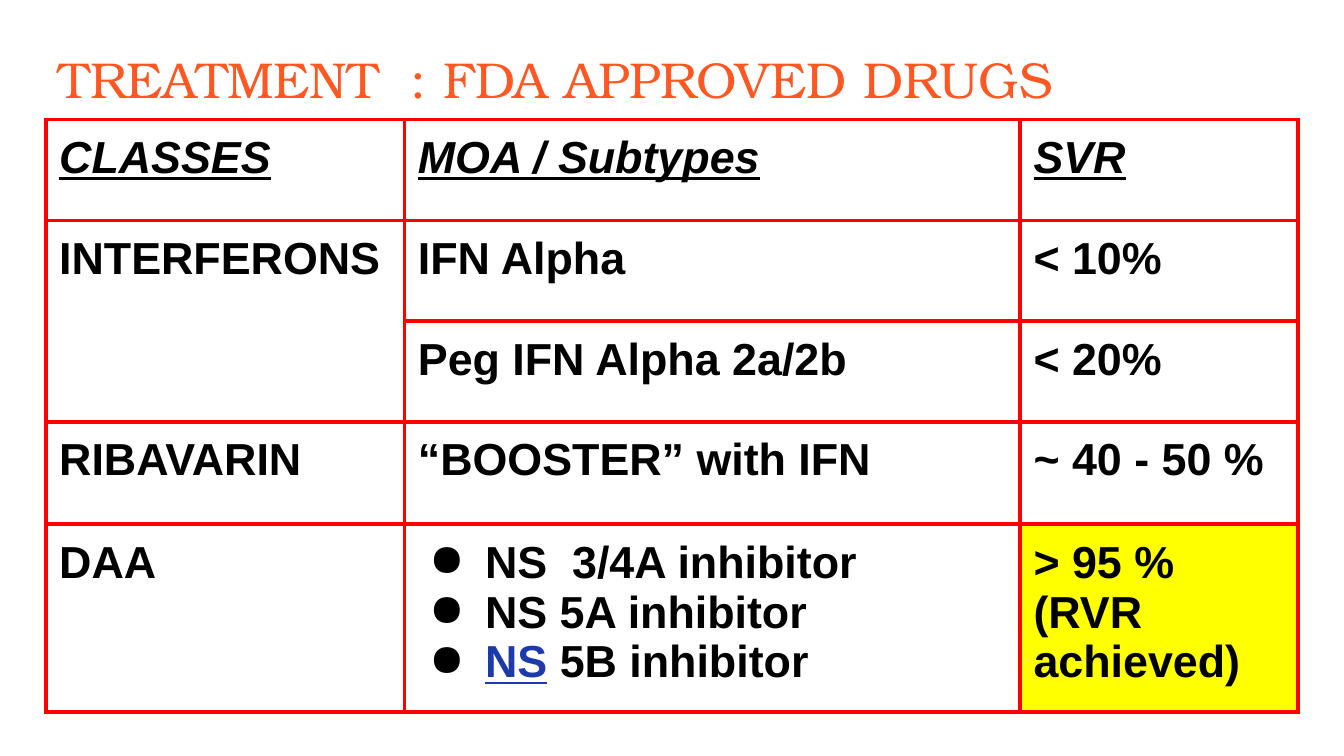
from lxml.etree import SubElement
from pptx import Presentation
from pptx.dml.color import RGBColor
from pptx.enum.text import MSO_ANCHOR
from pptx.oxml.ns import qn
from pptx.util import Pt

BLACK = RGBColor(0x00, 0x00, 0x00)
ORANGE = RGBColor(0xFF, 0x57, 0x22)
RED = RGBColor(0xFF, 0x00, 0x00)
BLUE = RGBColor(0x1C, 0x3A, 0xA9)
YELLOW = RGBColor(0xFF, 0xFF, 0x00)

TITLE = "TREATMENT  : FDA APPROVED DRUGS"
ROWS = [
    ("CLASSES", "MOA / Subtypes", "SVR"),
    ("INTERFERONS", "IFN Alpha", "< 10%"),
    ("", "Peg IFN Alpha 2a/2b", "< 20%"),
    ("RIBAVARIN", "“BOOSTER” with IFN", "~ 40 - 50 %"),
    ("DAA", "NS  3/4A inhibitor\nNS 5A inhibitor\nNS 5B inhibitor", "> 95 %\n(RVR achieved)"),
]
LINKED_LINE, LINKED_WORD = "NS 5B inhibitor", "NS"
BULLETED, HIGHLIGHTED = (4, 1), (4, 2)
MERGED = (1, 0), (2, 0)

LEFT, TABLE_TOP = 24.5, 64.1
COLUMN_WIDTHS = [192.2, 329.8, 149]
ROW_HEIGHTS = [54, 54, 54, 54.7, 94.5]
INSET = 7.2
BORDER = 2.25

TITLE_FONT = {"name": "TeX Gyre Bonum", "size": Pt(27)}
BODY_FONT = {"name": "Arial", "size": Pt(24), "bold": True}
HEADER_FONT = {**BODY_FONT, "italic": True, "underline": True}
LINK_FONT = {**BODY_FONT, "underline": True}
MARGINS = {f"margin_{side}": Pt(INSET) for side in ("left", "top", "right", "bottom")}


def set_all(target, values):
    for name, value in values.items():
        setattr(target, name, value)


def add_span(para, text, font, color):
    span = para.add_run()
    span.text = text
    set_all(span.font, font)
    span.font.color.rgb = color


def add_bullet(para):
    props = para._p.get_or_add_pPr()
    props.set("marL", str(Pt(36)))
    props.set("indent", str(Pt(-30)))
    color = SubElement(props, qn("a:buClr"))
    SubElement(color, qn("a:srgbClr"), val=str(BLACK))
    SubElement(props, qn("a:buChar"), char="●")


def add_borders(cell):
    props = cell._tc.get_or_add_tcPr()
    for index, side in enumerate(("lnL", "lnR", "lnT", "lnB")):
        line = SubElement(props, qn(f"a:{side}"), w=str(Pt(BORDER)))
        props.insert(index, line)
        fill = SubElement(line, qn("a:solidFill"))
        SubElement(fill, qn("a:srgbClr"), val=str(RED))


def fill_cell(cell, position, text):
    set_all(cell, MARGINS)
    cell.vertical_anchor = MSO_ANCHOR.TOP
    if position == HIGHLIGHTED:
        cell.fill.solid()
        cell.fill.fore_color.rgb = YELLOW
    else:
        cell.fill.background()
    add_borders(cell)
    if not text:
        return
    font = HEADER_FONT if position[0] == 0 else BODY_FONT
    for index, line in enumerate(text.split("\n")):
        frame = cell.text_frame
        para = frame.add_paragraph() if index else frame.paragraphs[0]
        if position == BULLETED:
            add_bullet(para)
        if line == LINKED_LINE:
            add_span(para, LINKED_WORD, LINK_FONT, BLUE)
            line = line.removeprefix(LINKED_WORD)
        add_span(para, line, font, BLACK)


def add_title(page):
    box = page.shapes.add_textbox(Pt(LEFT), Pt(18.7), Pt(sum(COLUMN_WIDTHS)), Pt(45.4))
    frame = box.text_frame
    set_all(frame, {**MARGINS, "word_wrap": True, "vertical_anchor": MSO_ANCHOR.TOP})
    add_span(frame.paragraphs[0], TITLE, TITLE_FONT, ORANGE)


def add_drug_table(page):
    table = page.shapes.add_table(
        len(ROW_HEIGHTS), len(COLUMN_WIDTHS), Pt(LEFT), Pt(TABLE_TOP),
        Pt(sum(COLUMN_WIDTHS)), Pt(sum(ROW_HEIGHTS)),
    ).table
    set_all(table, {"first_row": False, "horz_banding": False})
    for column, width in zip(table.columns, COLUMN_WIDTHS):
        column.width = Pt(width)
    for row, height in zip(table.rows, ROW_HEIGHTS):
        row.height = Pt(height)
    first, last = MERGED
    table.cell(*first).merge(table.cell(*last))
    for r, texts in enumerate(ROWS):
        for c, text in enumerate(texts):
            fill_cell(table.cell(r, c), (r, c), text)


def main():
    deck = Presentation()
    set_all(deck, {"slide_width": Pt(720), "slide_height": Pt(405)})
    page = deck.slides.add_slide(deck.slide_layouts[6])
    add_title(page)
    add_drug_table(page)
    deck.save("out.pptx")


if __name__ == "__main__":
    main()
